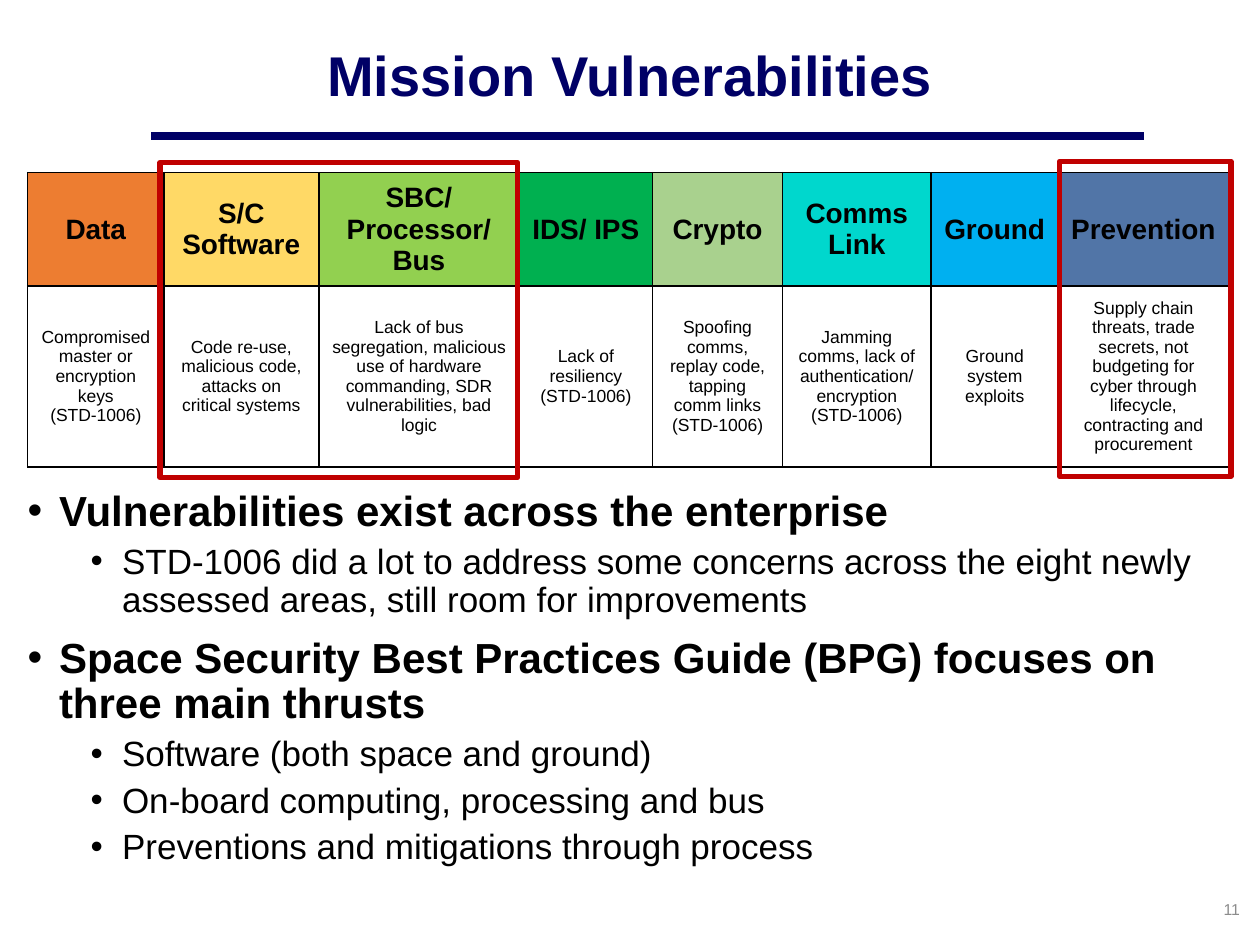
from lxml import etree
from pptx import Presentation
from pptx import util as u
from pptx.dml import color
from pptx.enum import shapes, text
from pptx.oxml import ns

COLORS = {
    "navy": "000066", "black": "000000", "white": "FFFFFF", "gray": "8C8C8C",
    "red": "C00000", "orange": "ED7D31", "yellow": "FFD966", "lime": "92D050",
    "green": "00B050", "sage": "A9D18E", "teal": "00D7CD", "sky": "00B0F0",
    "steel": "5175A7",
}

AREAS = [
    ("Data", "orange", 10.8, "Compromised master or encryption keys (STD-1006)"),
    ("S/C Software", "yellow", 12.3,
     "Code re-use, malicious code, attacks on critical systems"),
    ("SBC/ Processor/ Bus", "lime", 15.9,
     "Lack of bus segregation, malicious use of hardware commanding, "
     "SDR vulnerabilities, bad logic"),
    ("IDS/ IPS", "green", 10.6, "Lack of resiliency (STD-1006)"),
    ("Crypto", "sage", 10.3,
     "Spoofing comms, replay code, tapping comm links (STD-1006)"),
    ("Comms Link", "teal", 11.8,
     "Jamming comms, lack of authentication/ encryption\n(STD-1006)"),
    ("Ground", "sky", 10.1, "Ground system exploits"),
    ("Prevention", "steel", 13.5,
     "Supply chain threats, trade secrets, not budgeting for cyber through "
     "lifecycle, contracting and procurement"),
]

POINTS = [
    (0, "Vulnerabilities exist across the enterprise"),
    (1, "STD-1006 did a lot to address some concerns across the eight newly "
        "assessed areas, still room for improvements"),
    (0, "Space Security Best Practices Guide (BPG) focuses on three main thrusts"),
    (1, "Software (both space and ground)"),
    (1, "On-board computing, processing and bus"),
    (1, "Preventions and mitigations through process"),
]


class SlideBuilder:
    font = "Arial"
    columns, rows = 100, 75

    def __init__(self, deck):
        self.deck = deck
        self.page = deck.slides.add_slide(deck.slide_layouts[6])

    def x(self, columns):
        return round(self.deck.slide_width * columns / self.columns)

    def y(self, rows):
        return round(self.deck.slide_height * rows / self.rows)

    def place(self, left, top, width, height):
        return self.x(left), self.y(top), self.x(width), self.y(height)

    def rgb(self, name):
        return color.RGBColor.from_string(COLORS[name])

    def style(self, para, size, ink="black", bold=False, align=None):
        para.alignment = align
        for span in para.runs:
            span.font.name = self.font
            span.font.size = u.Pt(size)
            span.font.bold = bold
            span.font.color.rgb = self.rgb(ink)

    def text_box(self, area, anchor=text.MSO_ANCHOR.TOP):
        frame = self.page.shapes.add_textbox(*self.place(*area)).text_frame
        frame.word_wrap = True
        frame.vertical_anchor = anchor
        return frame

    def label(self, content, area, size, ink, bold, align):
        frame = self.text_box(area, text.MSO_ANCHOR.MIDDLE)
        frame.text = content
        self.style(frame.paragraphs[0], size, ink, bold, align)

    def rule(self, left, right, top, ink, weight):
        line = self.page.shapes.add_connector(
            shapes.MSO_CONNECTOR.STRAIGHT,
            self.x(left), self.y(top), self.x(right), self.y(top))
        line.line.color.rgb = self.rgb(ink)
        line.line.width = u.Pt(weight)
        etree.SubElement(line._element.spPr, ns.qn("a:effectLst"))

    def frame(self, area, ink, weight):
        box = self.page.shapes.add_shape(
            shapes.MSO_SHAPE.RECTANGLE, *self.place(*area))
        box.shadow.inherit = False
        box.fill.background()
        box.line.color.rgb = self.rgb(ink)
        box.line.width = u.Pt(weight)

    def cell(self, cell, content, fill, size, bold):
        cell.text = content
        cell.vertical_anchor = text.MSO_ANCHOR.MIDDLE
        for para in cell.text_frame.paragraphs:
            self.style(para, size, bold=bold, align=text.PP_ALIGN.CENTER)
        cell.fill.solid()
        cell.fill.fore_color.rgb = self.rgb(fill)
        properties = cell._tc.get_or_add_tcPr()
        for index, side in enumerate(("lnL", "lnR", "lnT", "lnB")):
            border = etree.Element(ns.qn(f"a:{side}"), w=str(u.Pt(1)))
            solid = etree.SubElement(border, ns.qn("a:solidFill"))
            etree.SubElement(solid, ns.qn("a:srgbClr"), val=COLORS["black"])
            properties.insert(index, border)

    def area_table(self, left, top, heights, areas):
        width = sum(area[2] for area in areas)
        table = self.page.shapes.add_table(
            len(heights), len(areas),
            *self.place(left, top, width, sum(heights))).table
        table.first_row = table.horz_banding = False
        for row, height in zip(table.rows, heights):
            row.height = self.y(height)
        for index, (name, fill, span, threat) in enumerate(areas):
            table.columns[index].width = self.x(span)
            self.cell(table.cell(0, index), name, fill, 16, True)
            self.cell(table.cell(1, index), threat, "white", 10, False)

    def bullets(self, area, points):
        frame = self.text_box(area)
        for index, (level, content) in enumerate(points):
            para = frame.add_paragraph() if index else frame.paragraphs[0]
            para.text = content
            para.level = level
            para.line_spacing = 0.9
            para.space_before = u.Pt((10, 5)[level] if index else 0)
            properties = para._p.get_or_add_pPr()
            properties.set("marL", str(self.x((2.5, 7.5)[level])))
            properties.set("indent", str(-self.x(2.5)))
            etree.SubElement(properties, ns.qn("a:buFont"), typeface=self.font)
            etree.SubElement(properties, ns.qn("a:buChar"), char="•")
            self.style(para, (24, 20)[level], bold=level == 0)


def main():
    deck = Presentation()
    deck.slide_width, deck.slide_height = u.Inches(10), u.Inches(7.5)
    slide = SlideBuilder(deck)
    slide.rule(12, 90.8, 10.8, "navy", 4.5)
    slide.label("Mission Vulnerabilities", (13.5, 2.3, 73, 7.2), 32, "navy",
                True, text.PP_ALIGN.CENTER)
    slide.label("11", (93.7, 70.2, 5.7, 4), 9, "gray", False,
                text.PP_ALIGN.RIGHT)
    slide.area_table(2.2, 13.7, (8.4, 13.4), AREAS)
    slide.frame((12.7, 12.9, 28.4, 25), "red", 3)
    slide.bullets((1.2, 38.4, 95.5, 32.7), POINTS)
    slide.frame((84.1, 12.8, 13.6, 25), "red", 3)
    deck.save("out.pptx")


if __name__ == "__main__":
    main()
